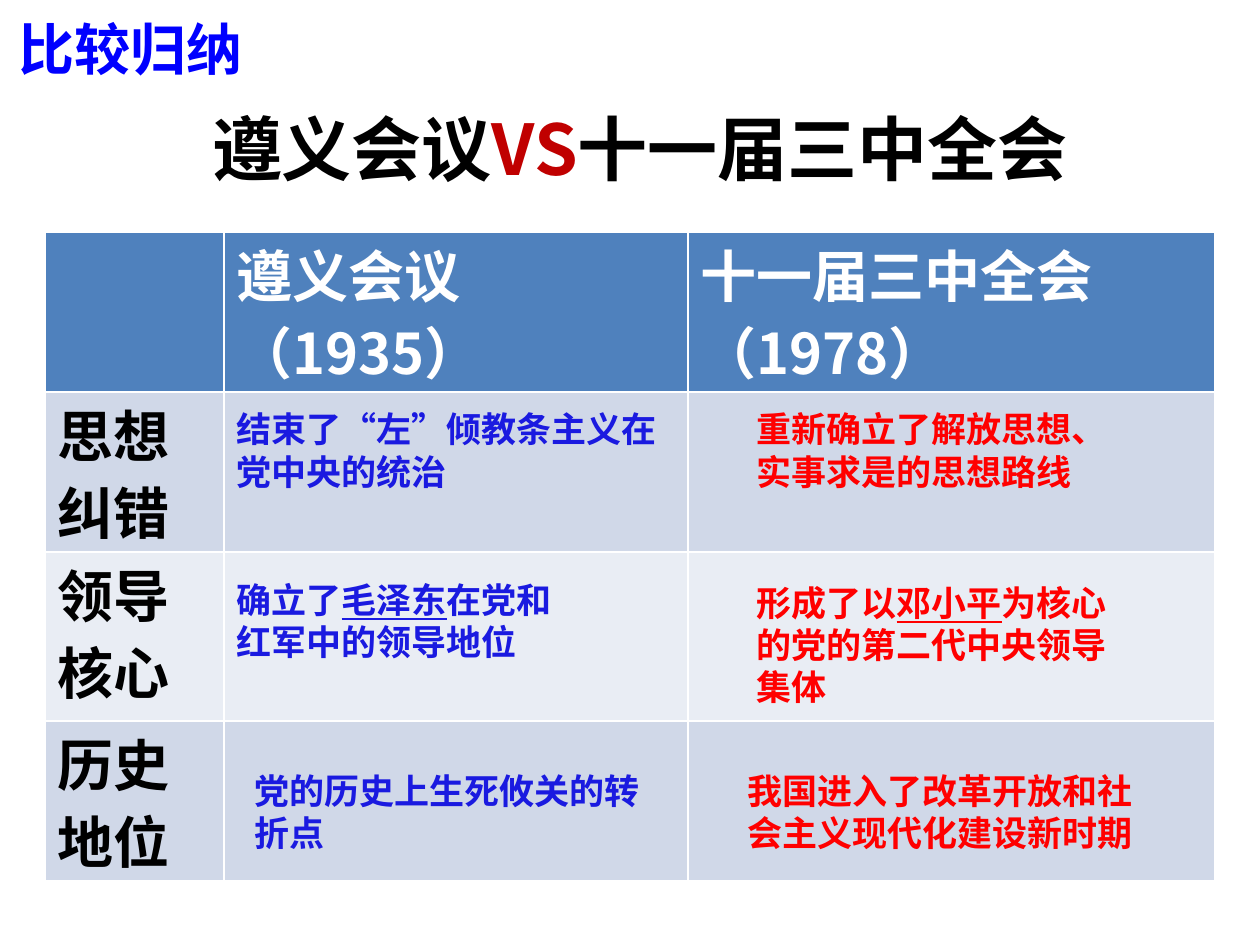
from lxml.etree import SubElement
from pptx import Presentation
from pptx.dml.color import RGBColor
from pptx.enum.text import MSO_ANCHOR as Anchor, MSO_AUTO_SIZE as AutoSize, PP_ALIGN as Align
from pptx.oxml.ns import qn
from pptx.util import Emu, Pt

COLORS = {"black": "000000", "white": "FFFFFF", "crimson": "C00000", "label": "0000FF",
          "blue": "1A1AE0", "red": "FF0000", "header": "4F81BD",
          "band": "D0D8E8", "light": "E9EDF4"}
CJK = "Noto Sans CJK SC"


def px(n):
    return Emu(round(n * 914400 / 126))


def rgb(name):
    return RGBColor.from_string(COLORS[name])


class Deck:
    """Holds the style and the current slide, and draws each kind of element."""

    def __init__(self):
        self.prs = Presentation()
        self.prs.slide_width, self.prs.slide_height = px(1260), px(945)
        self.s = self.prs.slides.add_slide(self.prs.slide_layouts[5])

    def run(self, p, text, size, color, font=CJK, underline=None):
        r = p.add_run()
        r.text = text
        f = r.font
        f.size, f.bold, f.name, f.underline = Pt(size), True, font, underline
        f.color.rgb = rgb(color)
        rPr = r._r.get_or_add_rPr()
        rPr.set("lang", "zh-CN")
        SubElement(rPr, qn("a:ea")).set("typeface", CJK)

    def title(self, x, y, w, h, runs):
        sp = self.s.shapes.title
        sp.left, sp.top, sp.width, sp.height = map(px, (x, y, w, h))
        tf = sp.text_frame
        tf.vertical_anchor = Anchor.MIDDLE
        p = tf.paragraphs[0]
        p.alignment = Align.CENTER
        for text, size, color in runs:
            self.run(p, text, size, color)

    def text(self, x, y, w, h, parts, color, size=20, line=24, top=9, bottom=3, font=CJK):
        tf = self.s.shapes.add_textbox(px(x), px(y), px(w), px(h)).text_frame
        tf.word_wrap, tf.auto_size = True, AutoSize.SHAPE_TO_FIT_TEXT
        tf.margin_top, tf.margin_bottom = px(top), px(bottom)
        p = tf.paragraphs[0]
        p.line_spacing = Pt(line)
        for i, part in enumerate(parts):
            self.run(p, part, size, color, font, underline=True if i == 1 else None)

    def table(self, x, y, widths, heights, rows, fills):
        frame = self.s.shapes.add_table(len(heights), len(widths), px(x), px(y),
                                        px(sum(widths)), px(sum(heights)))
        tbl = frame.table
        for col, w in zip(tbl.columns, widths):
            col.width = px(w)
        for i, (row, h) in enumerate(zip(tbl.rows, heights)):
            row.height = px(h)
            color, font = ("black", "Calibri") if i else ("white", CJK)
            for cell, lines in zip(row.cells, rows[i]):
                cell.fill.solid()
                cell.fill.fore_color.rgb = rgb(fills[i])
                cell.margin_top, cell.margin_bottom = px(5), px(0)
                tf = cell.text_frame
                for j, text in enumerate(lines):
                    p = tf.add_paragraph() if j else tf.paragraphs[0]
                    p.line_spacing = Pt(44)
                    self.run(p, text, 32, color, font)


def main():
    d = Deck()
    d.title(64, 66, 1134, 158, [(" ", 44, "black"), ("遵义会议", 40, "black"),
                                ("VS", 40, "crimson"), ("十一届三中全会", 40, "black")])
    d.text(6, 4, 275, 81, ["比较归纳"], "label", 32, 38, 11, 1, "Arial")
    d.table(45, 232, [179, 464, 527], [160, 160, 169, 160],
            [[[], ["遵义会议", "（1935）"], ["十一届三中全会（1978）"]],
             [["思想纠错"], [], []],
             [["领导核心"], [], []],
             [["历史地位"], [], []]],
            ["header", "band", "light", "band"])
    for x, y, w, h, color, parts in [
        (224, 399, 455, 97, "blue", ["结束了“左”倾教条主义在党中央的统治"]),
        (744, 399, 401, 97, "red", ["重新确立了解放思想、实事求是的思想路线"]),
        (224, 570, 375, 97, "blue", ["确立了", "毛泽东", "在党和红军中的领导地位"]),
        (744, 573, 392, 140, "red", ["形成了以", "邓小平", "为核心的党的第二代中央领导集体"]),
        (242, 760, 418, 97, "blue", ["党的历史上生死攸关的转折点"]),
        (735, 760, 420, 97, "red", ["我国进入了改革开放和社会主义现代化建设新时期"]),
    ]:
        d.text(x, y, w, h, parts, color)
    d.prs.save("out.pptx")


if __name__ == "__main__":
    main()
